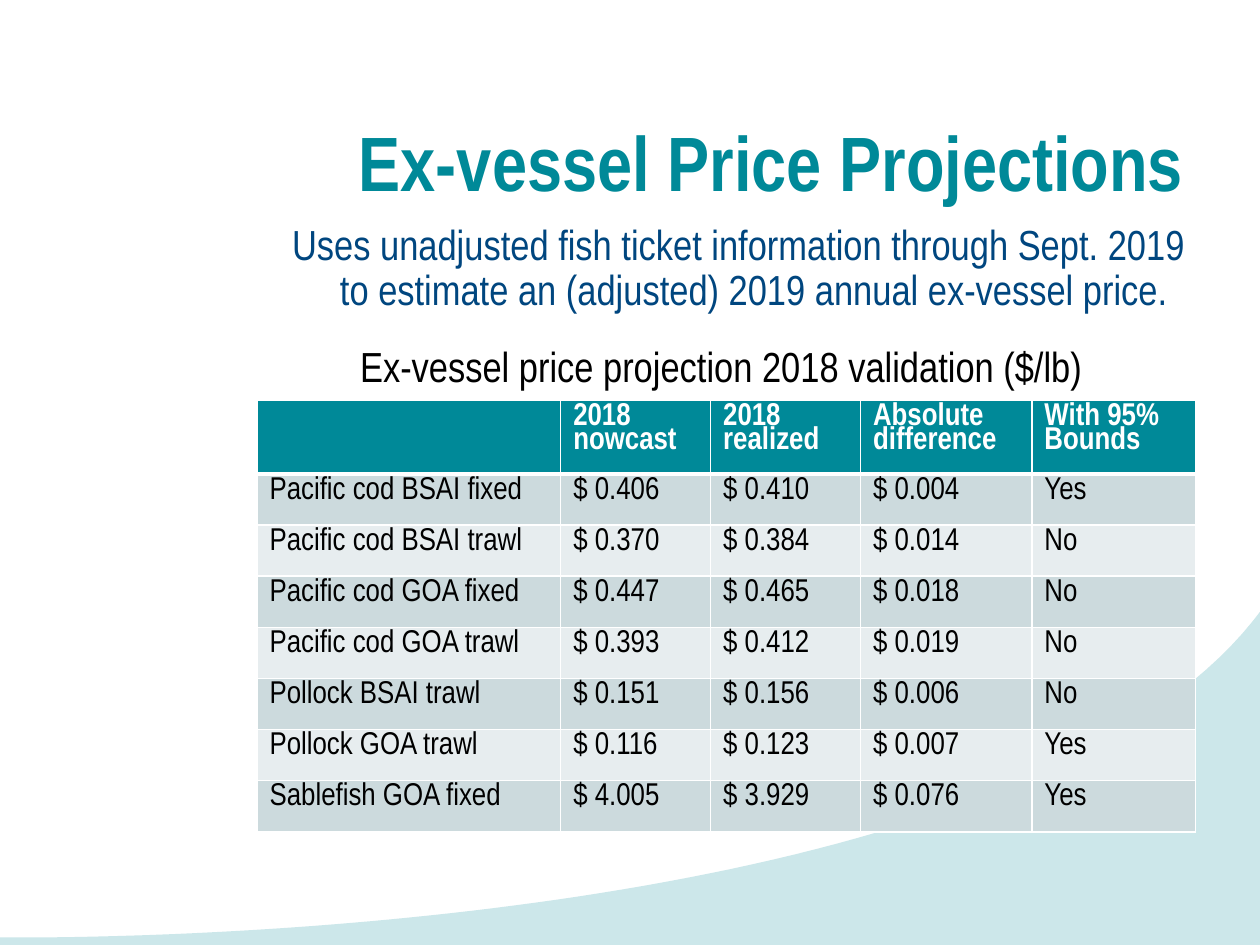
import pptx
import pptx.util
import pptx.dml.color
import pptx.enum.text
from lxml import etree
from pptx.oxml.ns import qn
from pptx.util import Inches, Pt

FONT = "Arial Narrow"
COLORS = {
    "teal": "008998",
    "navy": "00467F",
    "wave": "CCE7EA",
    "band_dark": "CCDADD",
    "band_light": "E7EDEF",
    "white": "FFFFFF",
    "black": "000000",
}
COLUMN_WIDTHS = [2.41, 1.19, 1.19, 1.36, 1.3]
PRICES = [
    ["", "2018 nowcast", "2018 realized", "Absolute difference", "With 95% Bounds"],
    ["Pacific cod BSAI fixed", "$ 0.406", "$ 0.410", "$ 0.004", "Yes"],
    ["Pacific cod BSAI trawl", "$ 0.370", "$ 0.384", "$ 0.014", "No"],
    ["Pacific cod GOA fixed", "$ 0.447", "$ 0.465", "$ 0.018", "No"],
    ["Pacific cod GOA trawl", "$ 0.393", "$ 0.412", "$ 0.019", "No"],
    ["Pollock BSAI trawl", "$ 0.151", "$ 0.156", "$ 0.006", "No"],
    ["Pollock GOA trawl", "$ 0.116", "$ 0.123", "$ 0.007", "Yes"],
    ["Sablefish GOA fixed", "$ 4.005", "$ 3.929", "$ 0.076", "Yes"],
]


def rgb(name):
    return pptx.dml.color.RGBColor.from_string(COLORS[name])


def write(frame, text, size, color, bold=False, line_spacing=None):
    """Fill a text frame with one formatted paragraph and return it."""
    paragraph = frame.paragraphs[0]
    paragraph.text = text
    paragraph.line_spacing = line_spacing
    for font in [paragraph.font] + [run.font for run in paragraph.runs]:
        font.name, font.size, font.bold = FONT, Pt(size), bold
        font.color.rgb = rgb(color)
    return paragraph


def add_wave(slide, left, top, width, height):
    """Draw the swoosh whose upper edge is a cubic curve rising to the right."""
    curve = [(0, 0.97), (0, 0.97), (0.8, 1.02), (1, 0)]
    steps = 80
    edge = []
    for step in range(steps + 1):
        t = step / steps
        weights = [(1 - t) ** 3, 3 * t * (1 - t) ** 2, 3 * t**2 * (1 - t), t**3]
        edge.append(tuple(
            sum(weight * point[axis] for weight, point in zip(weights, curve))
            for axis in (0, 1)))
    outline = [(left + x * width, top + y * height)
               for x, y in edge + [(1, 1), (0, 1)]]
    builder = slide.shapes.build_freeform(*outline[0], scale=1.0)
    builder.add_line_segments(outline[1:], close=True)
    wave = builder.convert_to_shape()
    wave.shadow.inherit = False
    wave.fill.solid()
    wave.fill.fore_color.rgb = rgb("wave")
    wave.line.fill.background()


def place_title(slide, left, top, width, height):
    title = slide.shapes.title
    title.left, title.top, title.width, title.height = left, top, width, height
    frame = title.text_frame
    frame.auto_size = pptx.enum.text.MSO_AUTO_SIZE.NONE
    frame.vertical_anchor = pptx.enum.text.MSO_ANCHOR.TOP
    heading = write(frame, "Ex-vessel Price Projections", 44, "teal", True, 0.8)
    heading.alignment = pptx.enum.text.PP_ALIGN.RIGHT


def add_text(slide, box, text, color, line_spacing=None):
    frame = slide.shapes.add_textbox(*box).text_frame
    frame.word_wrap = True
    return write(frame, text, 24, color, line_spacing=line_spacing)


def add_summary(slide, *box):
    summary = add_text(
        slide, box,
        "Uses unadjusted fish ticket information through Sept. 2019 "
        "to estimate an (adjusted) 2019 annual ex-vessel price.",
        "navy", 0.9)
    properties = summary._p.get_or_add_pPr()
    properties.set("marL", str(Inches(0.38)))
    properties.set("indent", str(-Inches(0.38)))


def set_borders(cell, top, bottom):
    """Give a cell white borders, with the top and bottom widths in points."""
    properties = cell._tc.get_or_add_tcPr()
    for side, width in (("L", 1), ("R", 1), ("T", top), ("B", bottom)):
        line = etree.SubElement(properties, qn(f"a:ln{side}"), w=str(Pt(width)))
        fill = etree.SubElement(line, qn("a:solidFill"))
        etree.SubElement(fill, qn("a:srgbClr"), val=COLORS["white"])


def add_price_table(slide, left, top, width, height):
    table = slide.shapes.add_table(
        len(PRICES), len(COLUMN_WIDTHS), left, top, width, height).table
    for column, column_width in zip(table.columns, COLUMN_WIDTHS):
        column.width = Inches(column_width)
    for r, prices in enumerate(PRICES):
        header = r == 0
        band = "teal" if header else "band_dark" if r % 2 else "band_light"
        for c, text in enumerate(prices):
            cell = table.cell(r, c)
            set_borders(cell, top=3 if r == 1 else 1, bottom=3 if header else 1)
            cell.fill.solid()
            cell.fill.fore_color.rgb = rgb(band)
            write(cell.text_frame, text, 18,
                  "white" if header else "black", header, 0.8)


def main():
    deck = pptx.Presentation()
    deck.slide_width, deck.slide_height = Inches(10), Inches(7.5)
    slide = deck.slides.add_slide(deck.slide_layouts[5])
    add_wave(slide, Inches(-0.01), Inches(4.83), Inches(10.03), Inches(2.69))
    place_title(slide, Inches(2.22), Inches(1), Inches(7.28), Inches(0.9))
    add_summary(slide, Inches(2.22), Inches(1.73), Inches(7.47), Inches(0.81))
    add_price_table(slide, Inches(2.04), Inches(3.18), Inches(7.45), Inches(3.25))
    caption_box = Inches(2.76), Inches(2.65), Inches(6.18), Inches(0.5)
    add_text(slide, caption_box,
             "Ex-vessel price projection 2018 validation ($/lb)", "black")
    deck.save("out.pptx")


if __name__ == "__main__":
    main()
